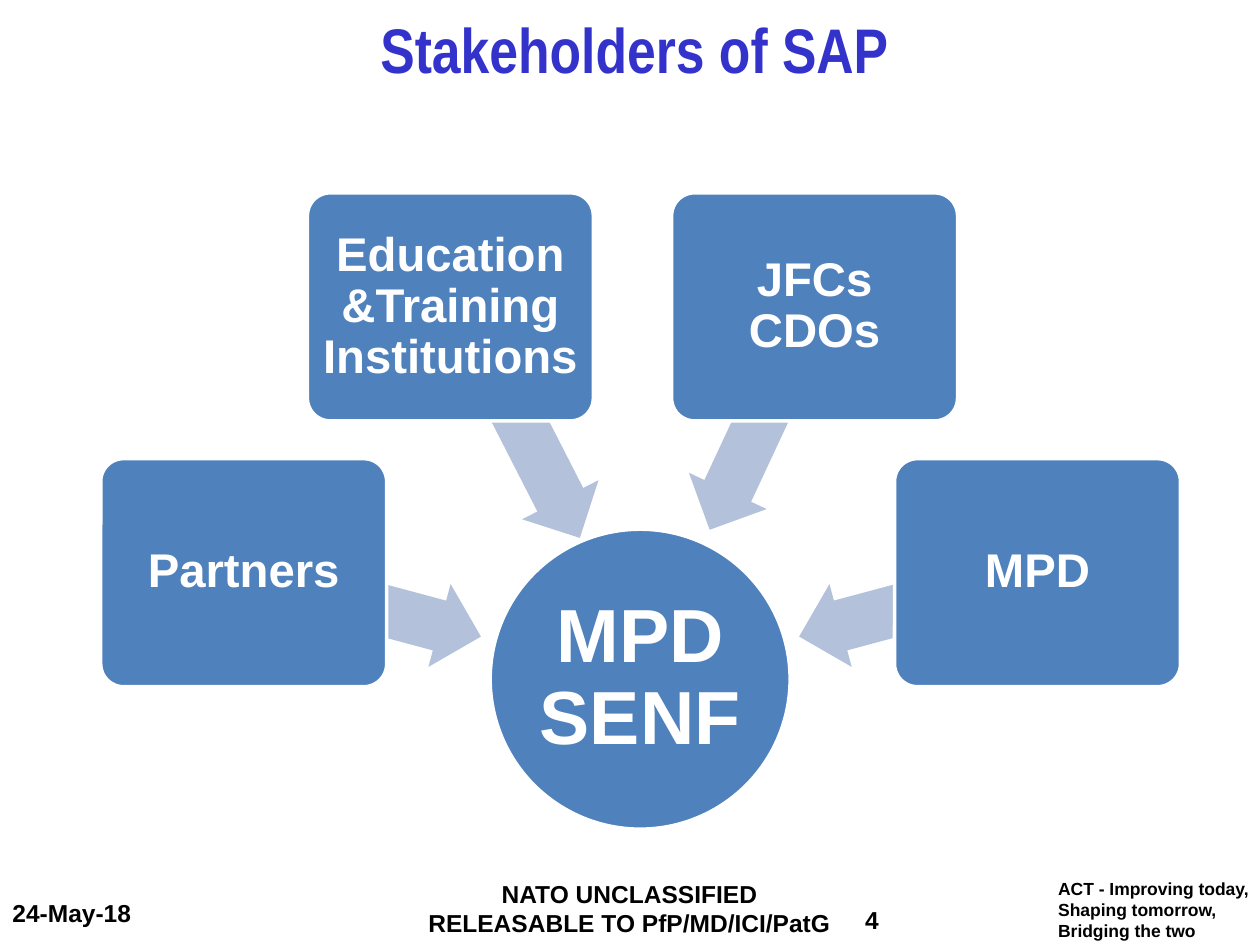
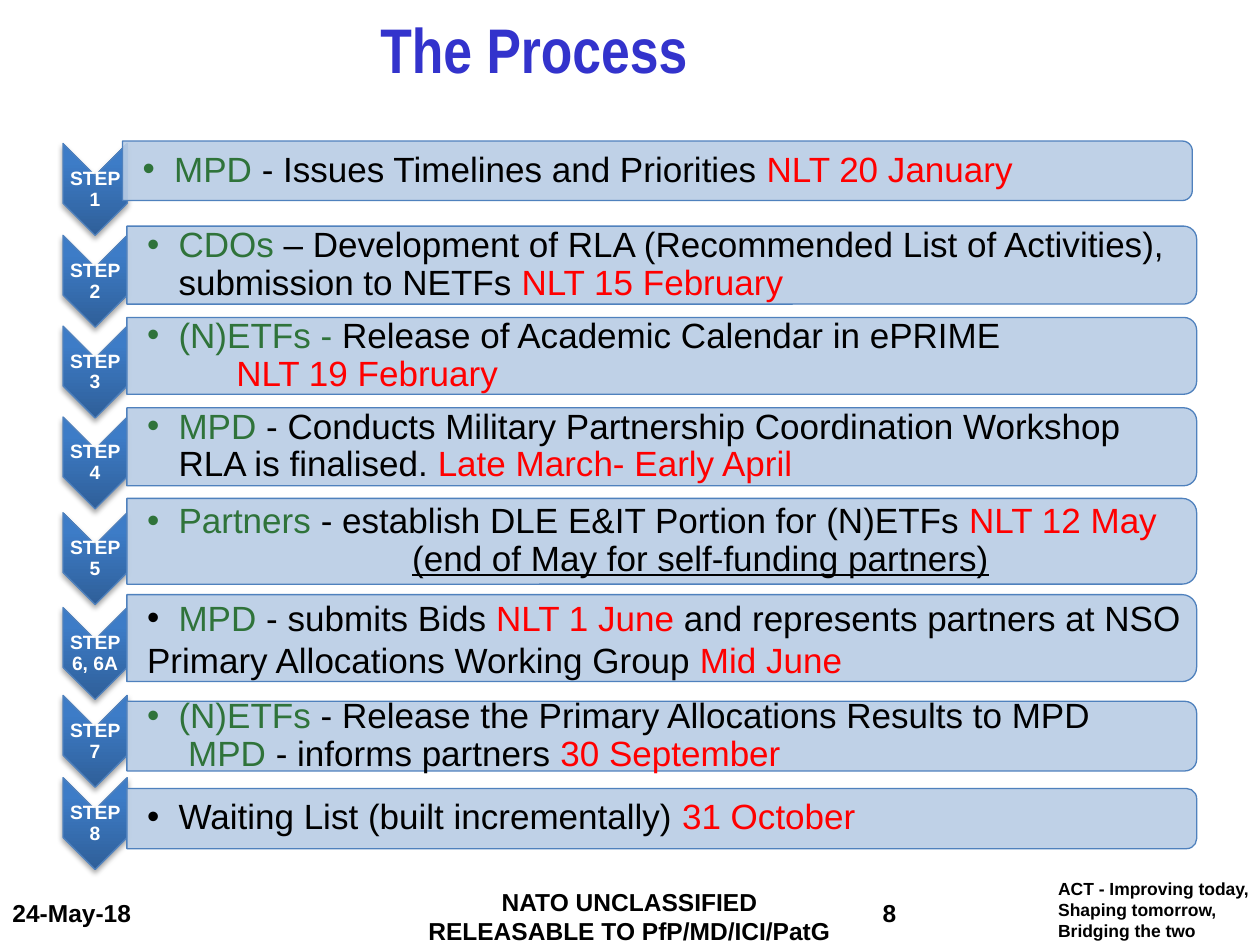
from dataclasses import dataclass
from typing import NamedTuple

from lxml import etree
from pptx import Presentation
from pptx.dml.color import RGBColor
from pptx.enum import shapes, text
from pptx.oxml.ns import qn
from pptx.util import Pt


@dataclass(frozen=True)
class Theme:
    heading_font: str = "Arial Narrow"
    body_font: str = "Arial"
    heading: str = "3333CC"
    ink: str = "000000"
    light: str = "FFFFFF"
    block: str = "4F81BD"
    arrow: str = "B3C1DB"
    bar: str = "B9CDE5"
    step_dark: str = "2F5F99"
    step_light: str = "3D7CC7"
    actor: str = "2F733A"
    deadline: str = "FF0000"
    heading_size: float = 36
    hub_size: float = 43
    block_size: float = 27
    bar_size: float = 20
    footer_size: float = 14
    step_size: float = 11
    tagline_size: float = 10


THEME = Theme()
CENTER = text.PP_ALIGN.CENTER
LEFT = text.PP_ALIGN.LEFT
MIDDLE = text.MSO_ANCHOR.MIDDLE
TOP = text.MSO_ANCHOR.TOP
Shape = shapes.MSO_SHAPE


class Area(NamedTuple):
    left: float
    top: float
    width: float
    height: float

    def points(self) -> list[Pt]:
        return [Pt(value) for value in self]

    def before_quarter_turn(self) -> "Area":
        """Area of an unturned shape that covers this one once turned 90 degrees."""
        shift = (self.width - self.height) / 2
        return Area(self.left + shift, self.top - shift, self.height, self.width)


class Span(NamedTuple):
    words: str
    color: str = THEME.ink
    underline: bool = False


class Line(NamedTuple):
    spans: list[Span]
    indent: float = 0  # measured from the text that follows the bullet


class Stakeholder(NamedTuple):
    name: str
    left: float
    top: float
    arrow: Area
    angle: float


class Step(NamedTuple):
    label: str
    chevron_top: float
    bar_top: float
    bar_height: float
    lines: list[Line]
    bar_left: float = 72.5
    spacing: float = 0.9
    bullet: str = THEME.actor


def actor(words: str) -> Span:
    return Span(words, THEME.actor)


def deadline(words: str) -> Span:
    return Span(words, THEME.deadline)


STAKEHOLDERS = [
    Stakeholder("Partners", 57.6, 262.1, Area(136.8, 321.1, 140.4, 49), 195),
    Stakeholder("Education &Training Institutions", 175.7, 110.2,
                Area(258.5, 238.3, 100.1, 49), 242.9),
    Stakeholder("JFCs CDOs", 383.8, 110.2, Area(365, 214.6, 140.4, 49), 295),
    Stakeholder("MPD", 511.2, 262.1, Area(454.3, 321.1, 140.4, 49), 345),
]

STEPS = [
    Step("STEP 1", 82, 80.6, 34, [
        Line([actor("MPD "), Span("- Issues Timelines and Priorities "),
              deadline("NLT 20 January")])], bar_left=70),
    Step("STEP 2", 134.5, 129.2, 44.6, [
        Line([actor("CDOs"),
              Span(" – Development of RLA (Recommended List of Activities), "
                   "submission to NETFs "),
              deadline("NLT 15 February")])]),
    Step("STEP 3", 186.4, 181.4, 43.9, [
        Line([actor("(N)ETFs - "), Span("Release of Academic Calendar in ePRIME")]),
        Line([deadline("NLT 19 February")], indent=33)]),
    Step("STEP 4", 238.3, 233, 44.6, [
        Line([actor("MPD"),
              Span(" - Conducts Military Partnership Coordination Workshop")]),
        Line([Span("RLA is finalised. "), deadline("Late March- Early April")])]),
    Step("STEP 5", 293, 284.8, 49, [
        Line([actor("Partners"), Span(" - establish DLE E&IT Portion for (N)ETFs "),
              deadline("NLT 12 May")]),
        Line([Span("(end of May for self-funding partners)", underline=True)],
             indent=133.5)]),
    Step("STEP 6, 6A", 347.2, 339.8, 49.7, [
        Line([actor("MPD"), Span(" - submits Bids "), deadline("NLT 1 June "),
              Span("and represents partners at NSO")]),
        Line([Span("Primary Allocations Working Group "), deadline("Mid June")],
             indent=-18)], spacing=1.0, bullet=THEME.ink),
    Step("STEP 7", 397.4, 400.8, 39.8, [
        Line([actor("(N)ETFs"),
              Span(" - Release the Primary Allocations Results to MPD")]),
        Line([actor("MPD"), Span(" - informs partners "), deadline("30 September")],
             indent=5.5)]),
    Step("STEP 8", 444.4, 450.6, 34.4, [
        Line([Span("Waiting List (built incrementally) "), deadline("31 October")])],
        bullet=THEME.ink),
]


def apply(target, values: dict) -> None:
    for name, value in values.items():
        setattr(target, name, value)


def format_frame(frame, margins: tuple[float, float, float, float], anchor) -> None:
    left, top, right, bottom = map(Pt, margins)
    apply(frame, {"word_wrap": True, "auto_size": text.MSO_AUTO_SIZE.NONE,
                  "vertical_anchor": anchor, "margin_left": left,
                  "margin_top": top, "margin_right": right, "margin_bottom": bottom})


def add_span(para, span: Span, size: float, bold: bool, font: str = THEME.body_font) -> None:
    run = para.add_run()
    run.text = span.words
    apply(run.font, {"name": font, "size": Pt(size), "bold": bold,
                     "underline": span.underline})
    run.font.color.rgb = RGBColor.from_string(span.color)


def write_bold(frame, lines: list[str], size: float, color: str = THEME.ink,
               align=CENTER, spacing: float = 1.0, font: str = THEME.body_font) -> None:
    for index, words in enumerate(lines):
        para = frame.add_paragraph() if index else frame.paragraphs[0]
        apply(para, {"alignment": align, "line_spacing": spacing})
        add_span(para, Span(words, color), size, True, font)


def add_text_box(page, area: Area, margins=(7.2, 3.6, 7.2, 3.6), anchor=MIDDLE):
    frame = page.shapes.add_textbox(*area.points()).text_frame
    format_frame(frame, margins, anchor)
    return frame


def add_flat_shape(page, kind, area: Area, fill: str | None = None,
                   line: str | None = None, width: float = 0.75):
    shape = page.shapes.add_shape(kind, *area.points())
    shape.shadow.inherit = False
    if fill:
        shape.fill.solid()
        shape.fill.fore_color.rgb = RGBColor.from_string(fill)
    if line:
        shape.line.color.rgb = RGBColor.from_string(line)
        shape.line.width = Pt(width)
    else:
        shape.line.fill.background()
    return shape


def add_child(parent, tag: str, **attributes: str):
    return etree.SubElement(parent, qn(tag), attributes)


def add_page(deck, heading: str, width: float, height: float, number: str,
             marking_top: float, number_at: tuple[float, float]):
    page = deck.slides.add_slide(deck.slide_layouts[5])
    title = page.shapes.title
    place = Area(210.2, 0, width, height)
    title.left, title.top, title.width, title.height = place.points()
    format_frame(title.text_frame, (7.2, 6, 7.2, 3.6), TOP)
    write_bold(title.text_frame, [heading], THEME.heading_size, THEME.heading,
               LEFT, font=THEME.heading_font)

    tagline = add_text_box(page, Area(597.6, 498.2, 125.3, 37.4), anchor=TOP)
    write_bold(tagline, ["ACT - Improving today,", "Shaping tomorrow,",
                         "Bridging the two"], THEME.tagline_size, align=LEFT)
    marking = add_text_box(page, Area(185.8, marking_top, 347.8, 41.8))
    write_bold(marking, ["NATO UNCLASSIFIED", "RELEASABLE TO PfP/MD/ICI/PatG"],
               THEME.footer_size)
    date = add_text_box(page, Area(0, 502.6, 174.2, 37.4))
    write_bold(date, ["24-May-18"], THEME.footer_size, align=LEFT)
    page_number = add_text_box(page, Area(*number_at, 49, 28.8))
    write_bold(page_number, [number], THEME.footer_size)
    return page


def add_block(page, kind, area: Area, label: str, size: float, margin: float):
    block = add_flat_shape(page, kind, area, THEME.block, THEME.light, 2)
    format_frame(block.text_frame, (margin,) * 4, MIDDLE)
    write_bold(block.text_frame, [label], size, THEME.light, spacing=0.9)
    return block


def add_stakeholder(page, stakeholder: Stakeholder) -> None:
    arrow = add_flat_shape(page, Shape.LEFT_ARROW, stakeholder.arrow, THEME.arrow)
    arrow.rotation = stakeholder.angle
    arrow.adjustments[0], arrow.adjustments[1] = 0.6, 0.5
    block = add_block(page, Shape.ROUNDED_RECTANGLE,
                      Area(stakeholder.left, stakeholder.top, 163.4, 130.3),
                      stakeholder.name, THEME.block_size, 4)
    block.adjustments[0] = 0.1


def add_chevron(page, step: Step) -> None:
    area = Area(36, step.chevron_top, 36.7, 52.5)
    chevron = add_flat_shape(page, Shape.CHEVRON, area.before_quarter_turn(),
                             line=THEME.block)
    chevron.rotation = 90
    chevron.fill.gradient()
    chevron.fill.gradient_angle = 90
    stops = zip(chevron.fill.gradient_stops, (0, 0.8),
                (THEME.step_dark, THEME.step_light))
    for stop, position, color in stops:
        stop.position = position
        stop.color.rgb = RGBColor.from_string(color)
    properties = chevron._element.spPr
    properties.find(qn("a:gradFill")).set("rotWithShape", "0")
    shadow = add_child(properties.find(qn("a:effectLst")), "a:outerShdw",
                       blurRad=str(Pt(3.1)), dist=str(Pt(1.8)), dir="5400000",
                       rotWithShape="0")
    color = add_child(shadow, "a:srgbClr", val=THEME.ink)
    add_child(color, "a:alpha", val="35000")

    label = add_text_box(page, Area(area.left, area.top + 18.4, area.width, 15.8),
                         (0.7,) * 4)
    write_bold(label, [step.label], THEME.step_size, THEME.light, spacing=0.9)


def add_bar(page, step: Step) -> None:
    area = Area(step.bar_left, step.bar_top, 611.3, step.bar_height)
    bar = add_flat_shape(page, Shape.ROUND_2_SAME_RECTANGLE,
                         area.before_quarter_turn(), THEME.bar, THEME.block)
    bar.rotation = 90
    color = bar._element.spPr.find(qn("a:solidFill")).find(qn("a:srgbClr"))
    add_child(color, "a:alpha", val="90000")

    inner = Area(area.left, area.top + 2, area.width - 2, area.height - 4)
    frame = add_text_box(page, inner, (11.5, 0.7, 0.7, 0.7))
    for index, line in enumerate(step.lines):
        para = frame.add_paragraph() if index else frame.paragraphs[0]
        format_bar_line(para, line, None if index else step.bullet)
        para.line_spacing = step.spacing
        for span in line.spans:
            add_span(para, span, THEME.bar_size, False)


def format_bar_line(para, line: Line, bullet: str | None) -> None:
    properties = para._p.get_or_add_pPr()
    properties.set("marL", str(Pt(18 + line.indent)))
    properties.set("indent", str(Pt(-18 if bullet else 0)))
    if bullet:
        add_child(add_child(properties, "a:buClr"), "a:srgbClr", val=bullet)
        add_child(properties, "a:buFont", typeface=THEME.body_font)
        add_child(properties, "a:buChar", char="•")
    else:
        add_child(properties, "a:buNone")


def main() -> None:
    deck = Presentation()
    deck.slide_width, deck.slide_height = Pt(720), Pt(540)

    page = add_page(deck, "Stakeholders of SAP", 408.2, 72, "4", 498.2, (473.8, 511.2))
    add_block(page, Shape.OVAL, Area(280.1, 302.4, 171.4, 171.4), "MPD SENF",
              THEME.hub_size, 2)
    for stakeholder in STAKEHOLDERS:
        add_stakeholder(page, stakeholder)

    page = add_page(deck, "The Process", 282.2, 53.3, "8", 502.6, (483.8, 506.9))
    for step in STEPS:
        add_chevron(page, step)
        add_bar(page, step)

    deck.save("out.pptx")


if __name__ == "__main__":
    main()
